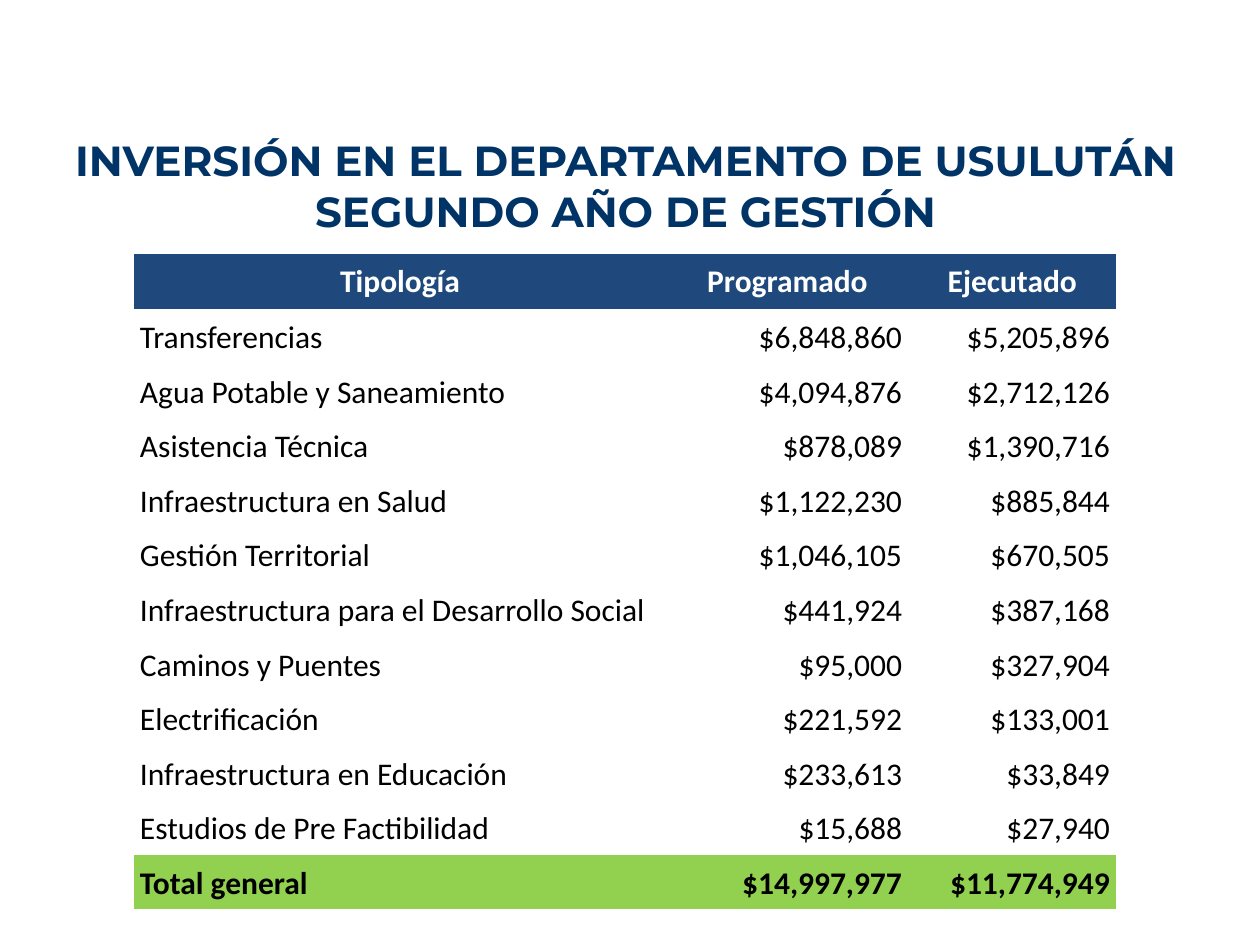
import pptx
import pptx.dml.color
import pptx.enum.text
import pptx.util

Pt = pptx.util.Pt
ALIGN = pptx.enum.text.PP_ALIGN
ANCHOR = pptx.enum.text.MSO_ANCHOR


def color(hex_value):
    return pptx.dml.color.RGBColor.from_string(hex_value)


def format_text(paragraph, alignment, hex_color, **font_values):
    paragraph.alignment = alignment
    for run in paragraph.runs:
        run.font.color.rgb = color(hex_color)
        for name, value in font_values.items():
            setattr(run.font, name, value)


presentation = pptx.Presentation()
presentation.slide_width = Pt(720)
presentation.slide_height = Pt(540)
slide = presentation.slides.add_slide(presentation.slide_layouts[6])

# Title
title = slide.shapes.add_textbox(Pt(14.4), Pt(60.5), Pt(686), Pt(90.7))
title.text_frame.word_wrap = True
title.text_frame.vertical_anchor = ANCHOR.MIDDLE
paragraph = title.text_frame.paragraphs[0]
for index, line in enumerate(
    ["INVERSIÓN EN EL DEPARTAMENTO DE USULUTÁN", "SEGUNDO AÑO DE GESTIÓN"]
):
    if index:
        paragraph.add_line_break()
    paragraph.add_run().text = line
format_text(paragraph, ALIGN.CENTER, "003366", name="Montserrat", size=Pt(24), bold=True)

# Investment table
rows = [
    ("Tipología", "Programado", "Ejecutado"),
    ("Transferencias", "$6,848,860", "$5,205,896"),
    ("Agua Potable y Saneamiento", "$4,094,876", "$2,712,126"),
    ("Asistencia Técnica", "$878,089", "$1,390,716"),
    ("Infraestructura en Salud", "$1,122,230", "$885,844"),
    ("Gestión Territorial", "$1,046,105", "$670,505"),
    ("Infraestructura para el Desarrollo Social", "$441,924", "$387,168"),
    ("Caminos y Puentes", "$95,000", "$327,904"),
    ("Electrificación", "$221,592", "$133,001"),
    ("Infraestructura en Educación", "$233,613", "$33,849"),
    ("Estudios de Pre Factibilidad", "$15,688", "$27,940"),
    ("Total general", "$14,997,977", "$11,774,949"),
]
column_widths = [304.5, 138.2, 118.8]
row_height = 31.2
last_row = len(rows) - 1

table = slide.shapes.add_table(
    len(rows), len(column_widths),
    Pt(76.4), Pt(145.3), Pt(sum(column_widths)), Pt(row_height * len(rows)),
).table
table.horz_banding = False
for column, width in zip(table.columns, column_widths):
    column.width = Pt(width)

cell_format = {
    "margin_left": Pt(3.6),
    "margin_right": Pt(3.6),
    "margin_top": Pt(3.6),
    "margin_bottom": Pt(3.6),
}
for row_index, values in enumerate(rows):
    table.rows[row_index].height = Pt(row_height)
    is_header = row_index == 0
    is_total = row_index == last_row
    for column_index, value in enumerate(values):
        cell = table.cell(row_index, column_index)
        for name, setting in cell_format.items():
            setattr(cell, name, setting)
        cell.vertical_anchor = ANCHOR.MIDDLE if is_header else ANCHOR.BOTTOM

        if is_header or is_total:
            cell.fill.solid()
            cell.fill.fore_color.rgb = color("1F497D" if is_header else "92D050")
        elif column_index == 2:
            cell.fill.solid()
            cell.fill.fore_color.rgb = color("FFFFFF")
        else:
            cell.fill.background()

        if is_header:
            alignment = ALIGN.CENTER
        else:
            alignment = ALIGN.RIGHT if column_index else ALIGN.LEFT
        cell.text = value
        format_text(
            cell.text_frame.paragraphs[0], alignment,
            "FFFFFF" if is_header else "000000",
            name="Calibri", size=Pt(18), bold=is_header or is_total,
        )

# Plain grid: the "No Style, No Grid" table style draws no borders
table_style = table._tbl.tblPr.find(pptx.oxml.ns.qn("a:tableStyleId"))
table_style.text = "{2D5ABB26-0587-4C30-8999-92F81FD0307C}"

presentation.save("out.pptx")
